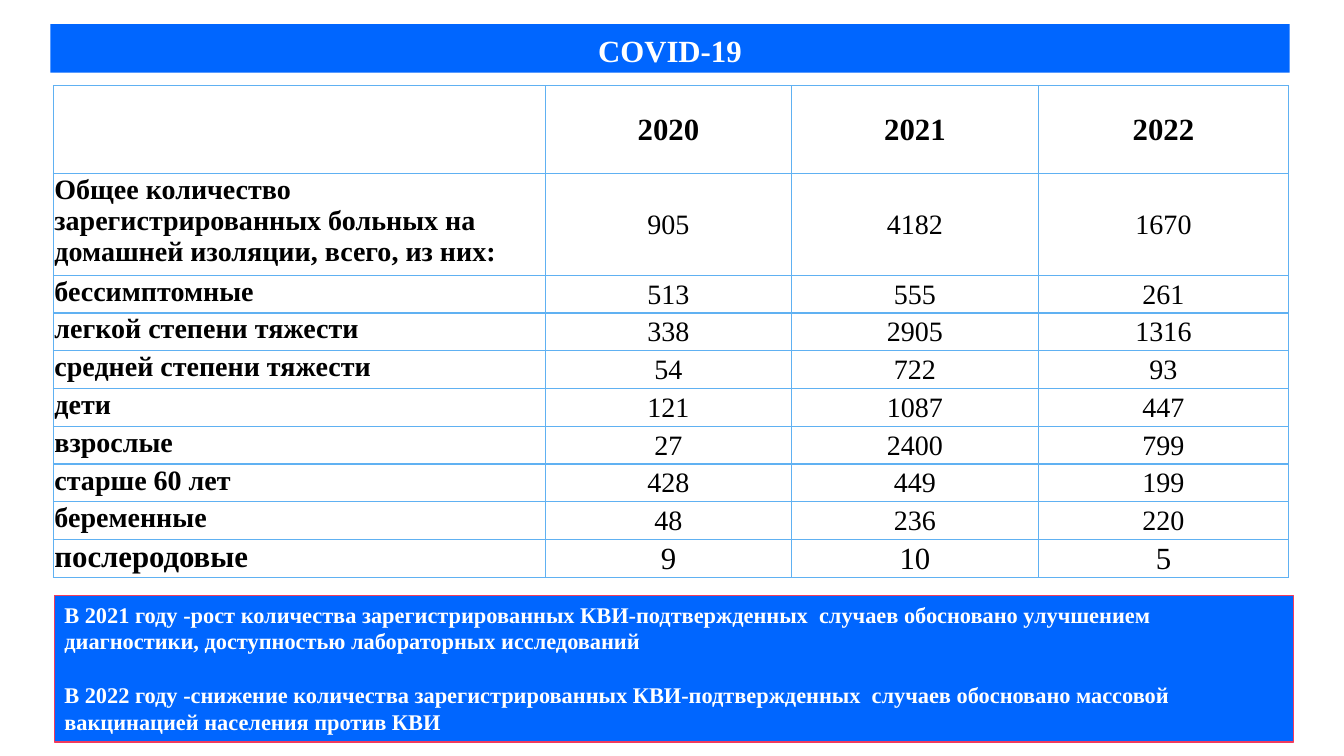
from pptx import Presentation
from pptx.dml.color import RGBColor
from pptx.enum.shapes import MSO_SHAPE
from pptx.enum.text import MSO_ANCHOR, MSO_AUTO_SIZE, PP_ALIGN
from pptx.oxml import parse_xml
from pptx.oxml.ns import nsdecls
from pptx.util import Inches, Pt

YEARS = ["2020", "2021", "2022"]
CASES = [
    ("Общее количество зарегистрированных больных на домашней изоляции, всего, из них:", 905, 4182, 1670),
    ("бессимптомные", 513, 555, 261),
    ("легкой степени тяжести", 338, 2905, 1316),
    ("средней степени тяжести", 54, 722, 93),
    ("дети", 121, 1087, 447),
    ("взрослые", 27, 2400, 799),
    ("старше 60 лет", 428, 449, 199),
    ("беременные", 48, 236, 220),
    ("послеродовые", 9, 10, 5),
]
CONCLUSIONS = [
    ("В 2021 году -рост количества зарегистрированных КВИ-подтвержденных  случаев обосновано улучшением", 0),
    ("диагностики, доступностью лабораторных исследований", 0),
    ("В 2022 году -снижение количества зарегистрированных КВИ-подтвержденных  случаев "
     "обосновано массовой вакцинацией населения против КВИ", 19),
]


def rgb(value):
    return RGBColor.from_string(value)


def apply(target, values):
    for name, value in values.items():
        setattr(target, name, value)


class CovidSlide:
    font = "Times New Roman"
    blue, white, black = "0066FF", "FFFFFF", "000000"
    grid, frame = "60B1F2", "F03B5E"

    def __init__(self, prs):
        self.s = prs.slides.add_slide(prs.slide_layouts[5])

    def text(self, p, text, size, color, bold=True, **layout):
        apply(p, layout)
        r = p.add_run()
        r.text = text
        apply(r.font, {"name": self.font, "size": Pt(size), "bold": bold})
        r.font.color.rgb = rgb(color)

    def title(self, text, box):
        sp = self.s.shapes.title
        apply(sp, dict(zip(("left", "top", "width", "height"), map(Inches, box))))
        sp.fill.solid()
        sp.fill.fore_color.rgb = rgb(self.blue)
        tf = sp.text_frame
        apply(tf, {"auto_size": MSO_AUTO_SIZE.NONE, "vertical_anchor": MSO_ANCHOR.TOP, "word_wrap": True})
        self.text(tf.paragraphs[0], text, 22, self.white, alignment=PP_ALIGN.CENTER,
                  line_spacing=1.07, space_before=Pt(0), space_after=Pt(8))

    def note(self, paragraphs, box):
        sp = self.s.shapes.add_shape(MSO_SHAPE.RECTANGLE, *map(Inches, box))
        sp.shadow.inherit = False
        sp.fill.solid()
        sp.fill.fore_color.rgb = rgb(self.blue)
        sp.line.color.rgb = rgb(self.frame)
        sp.line.width = Pt(1)
        tf = sp.text_frame
        apply(tf, {"word_wrap": True, "vertical_anchor": MSO_ANCHOR.TOP})
        for i, (text, gap) in enumerate(paragraphs):
            p = tf.add_paragraph() if i else tf.paragraphs[0]
            self.text(p, text, 16, self.white, alignment=PP_ALIGN.LEFT, space_before=Pt(gap))

    def cell(self, cell, text, size, bold, label):
        pad = Inches(0.01)
        apply(cell, {"margin_left": pad, "margin_right": pad, "margin_top": pad, "margin_bottom": 0,
                     "vertical_anchor": MSO_ANCHOR.TOP if label else MSO_ANCHOR.MIDDLE})
        tcPr = cell._tc.get_or_add_tcPr()
        for side in "LRTB":
            tcPr.append(parse_xml(
                f'<a:ln{side} {nsdecls("a")} w="{Pt(1)}"><a:solidFill>'
                f'<a:srgbClr val="{self.grid}"/></a:solidFill></a:ln{side}>'))
        cell.fill.background()
        if text:
            self.text(cell.text_frame.paragraphs[0], text, size, self.black, bold,
                      alignment=PP_ALIGN.LEFT if label else PP_ALIGN.CENTER)

    def table(self, rows, box, widths, heights):
        table = self.s.shapes.add_table(len(rows), len(widths), *map(Inches, box)).table
        apply(table, {"first_row": False, "horz_banding": False})
        for column, width in zip(table.columns, widths):
            column.width = Inches(width)
        for row, height in zip(table.rows, heights):
            row.height = Inches(height)
        for i, values in enumerate(rows):
            size = 22 if i in (0, len(rows) - 1) else 20
            for j, value in enumerate(values):
                self.cell(table.cell(i, j), str(value), size, i == 0 or j == 0, j == 0)


def main():
    prs = Presentation()
    apply(prs, {"slide_width": Inches(13.33), "slide_height": Inches(7.5)})
    slide = CovidSlide(prs)
    slide.title("COVID-19", (0.5, 0.24, 12.29, 0.48))
    slide.table([("", *YEARS), *CASES], (0.53, 0.85, 12.25, 4.88),
                (4.88, 2.44, 2.45, 2.48), [0.87, 1.01] + [3 / 8] * 8)
    slide.note(CONCLUSIONS, (0.54, 5.91, 12.29, 1.45))
    prs.save("out.pptx")


if __name__ == "__main__":
    main()
